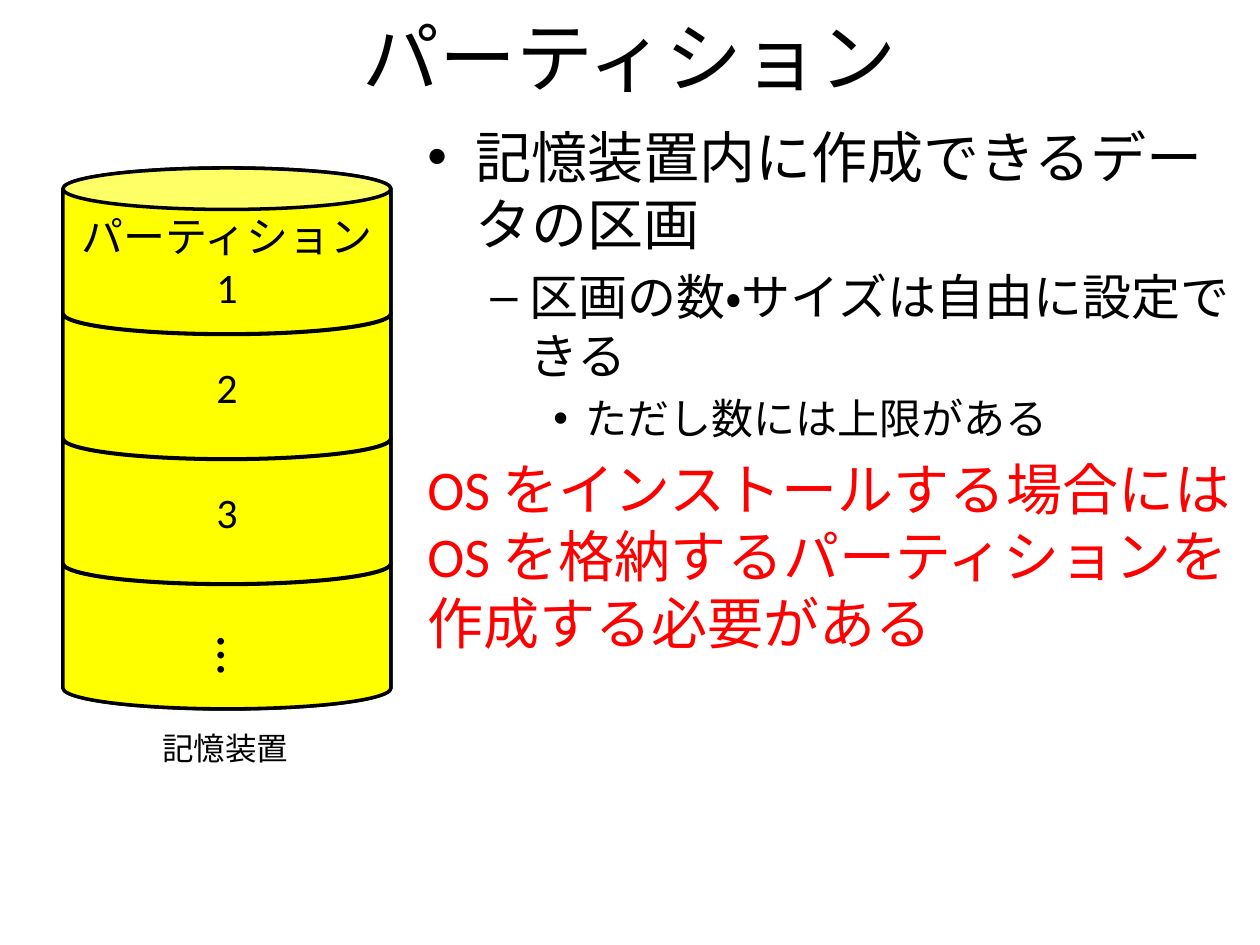
from lxml import etree
from pptx import Presentation, util as u
from pptx.dml.color import RGBColor
from pptx.enum import lang, shapes, text
from pptx.oxml import ns

SCALE = 914400 / 126
BLACK, RED, YELLOW = "000000", "FF0000", "FFFF00"
LEFT, TOP, WIDTH = 63, 168, 328
PART_HEIGHT, PART_STEP = 166, 125
PARTITIONS = ["パーティション 1", "2", "3", ""]
CENTER, MIDDLE = text.PP_ALIGN.CENTER, text.MSO_ANCHOR.MIDDLE
BODY = [
    ("記憶装置内に作成できるデータの区画",
     dict(size=32, bullet="•", margin=48, hanging=48)),
    ("区画の数・サイズは自由に設定できる",
     dict(size=28, bullet="–", margin=102, hanging=39, level=1)),
    ("ただし数には上限がある",
     dict(size=24, bullet="•", margin=158, hanging=32, level=2)),
    ("OS をインストールする場合にはOS を格納するパーティションを作成する必要がある",
     dict(size=32, color=RED)),
]


def px(n):
    """Turn slide pixels into EMU."""
    return u.Emu(round(n * SCALE))


def rgb(value):
    """Turn a hex string into a colour."""
    return RGBColor.from_string(value)


def write(p, content, size, color=BLACK, align=None):
    """Add a formatted run to a paragraph."""
    p.alignment = align
    r = p.add_run()
    r.text = content
    r.font.name = "Calibri"
    r.font.size = u.Pt(size)
    r.font.color.rgb = rgb(color)
    r.font.language_id = lang.MSO_LANGUAGE_ID.JAPANESE


def add_child(parent, tag, **attrs):
    """Append a DrawingML element with attributes."""
    return etree.SubElement(parent, ns.qn(tag), **attrs)


def outline(p, bullet=None, margin=0, hanging=0, level=0):
    """Set a paragraph's spacing, indent and bullet."""
    p.level = level
    pr = p._p.get_or_add_pPr()
    pr.set("marL", str(px(margin)))
    pr.set("indent", str(-px(hanging)))
    add_child(add_child(pr, "a:spcBef"), "a:spcPct", val="20000")
    if bullet:
        add_child(pr, "a:buFont", typeface="Arial")
        add_child(pr, "a:buChar", char=bullet)


def add_box(s, x, y, w, h, wrap=True, anchor=None):
    """Add a text box and return its shape."""
    sp = s.shapes.add_textbox(px(x), px(y), px(w), px(h))
    sp.text_frame.word_wrap = wrap
    sp.text_frame.vertical_anchor = anchor
    return sp


def add_label(s, content, x, y, w, h, size, align=CENTER, **frame):
    """Add a text box with one line of text."""
    sp = add_box(s, x, y, w, h, **frame)
    write(sp.text_frame.paragraphs[0], content, size, align=align)
    return sp


def add_can(parent, y, h, adjust, label=""):
    """Add a yellow cylinder with an optional label."""
    sp = parent.shapes.add_shape(
        shapes.MSO_SHAPE.CAN, px(LEFT), px(y), px(WIDTH), px(h))
    sp.adjustments[0] = adjust
    sp.shadow.inherit = False
    sp.fill.solid()
    sp.fill.fore_color.rgb = rgb(YELLOW)
    sp.line.color.rgb = rgb(BLACK)
    sp.line.width = u.Pt(2)
    if label:
        tf = sp.text_frame
        tf.word_wrap = True
        tf.vertical_anchor = MIDDLE
        write(tf.paragraphs[0], label, 24, align=CENTER)


def add_storage(s):
    """Draw the storage device and its stacked partitions."""
    last = len(PARTITIONS) - 1
    add_can(s, TOP, PART_STEP * last + PART_HEIGHT, 0.13)
    group = s.shapes.add_group_shape()
    for i in range(last, -1, -1):
        add_can(group, TOP + i * PART_STEP, PART_HEIGHT, 0.25, PARTITIONS[i])
    add_label(s, "記憶装置", 141, 723, 168, 53, 18, wrap=False)
    dots = add_label(s, "…", 203, 620, 73, 81, 32, align=None, wrap=False)
    dots.rotation = 90


def add_body(s):
    """Add the explanatory outline."""
    tf = add_box(s, 415, 116, 850, 658).text_frame
    for i, (content, style) in enumerate(BODY):
        p = tf.add_paragraph() if i else tf.paragraphs[0]
        font = {k: v for k, v in style.items() if k in ("size", "color")}
        outline(p, **{k: v for k, v in style.items() if k not in font})
        write(p, content, **font)


def main():
    """Build and save the slide."""
    prs = Presentation()
    prs.slide_width, prs.slide_height = px(1260), px(945)
    s = prs.slides.add_slide(prs.slide_layouts[6])
    add_label(s, "パーティション", 63, -23, 1134, 158, 44, anchor=MIDDLE)
    add_body(s)
    add_storage(s)
    prs.save("out.pptx")


if __name__ == "__main__":
    main()
